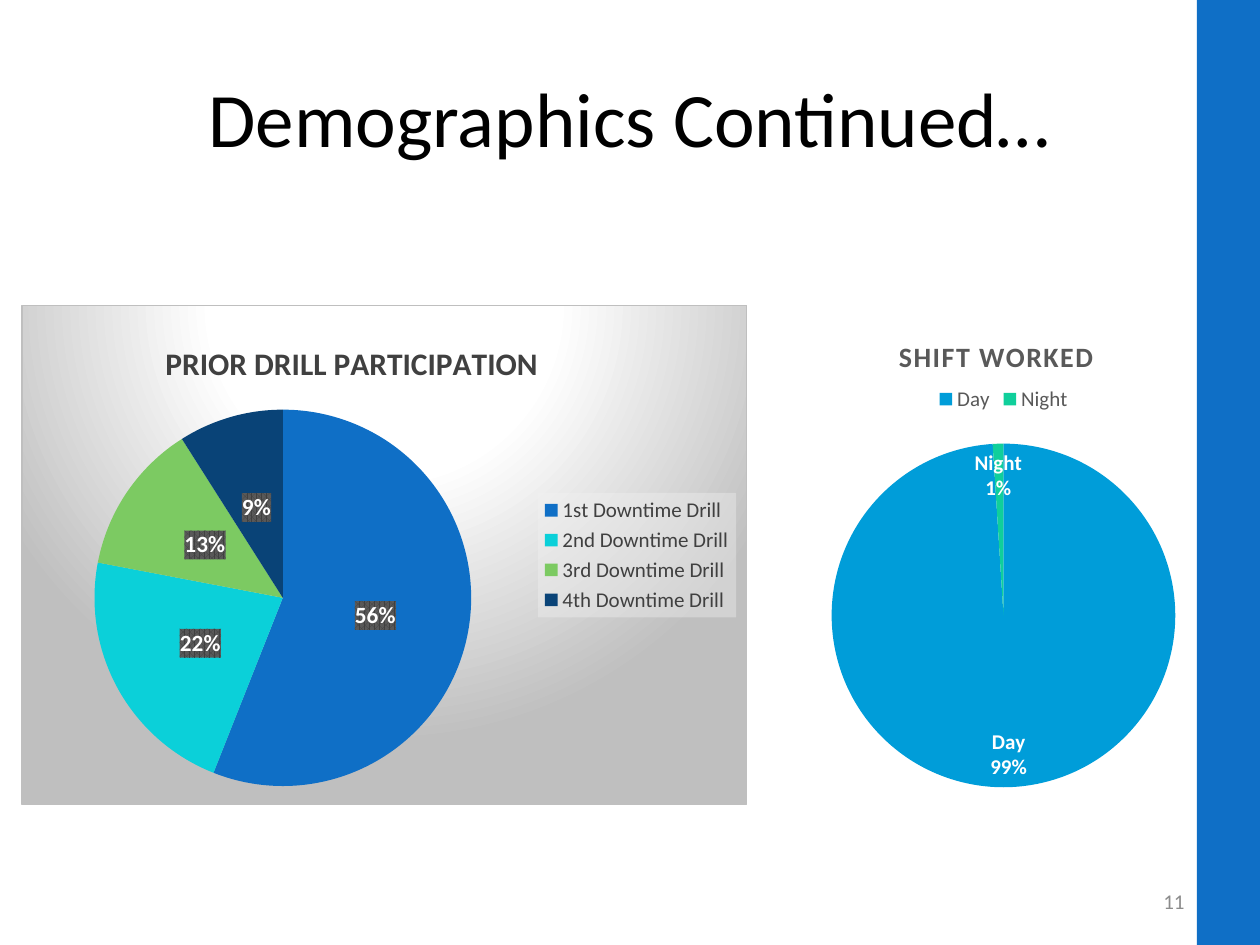
import pptx
import pptx.util
import pptx.chart.data
import pptx.dml.color
import pptx.enum.chart
import pptx.enum.shapes
import pptx.enum.text
import pptx.oxml
import pptx.oxml.ns

XL = pptx.enum.chart
ALIGN = pptx.enum.text.PP_ALIGN
W, H = 10, 7.5
FONT = "Calibri"
C = {"band": "0F6FC6", "black": "000000", "white": "FFFFFF", "number": "8C8C8C",
     "dark": "404040", "grey": "595959", "edge": "BFBFBF", "legend": "F2F2F2"}

# Content
TEXTS = [
    ("Demographics Continued…", (0.05, 0.04, 0.9, 1 / 6), ALIGN.CENTER,
     {"size": 44, "color": C["black"]}),
    ("11", (0.717, 0.927, 0.233, 0.053), ALIGN.RIGHT, {"size": 12, "color": C["number"]}),
]
CHART_TOP, CHART_HEIGHT = 2.42, 3.97
CHARTS = [
    {"title": "SHIFT WORKED", "left": 5, "width": 5.93,
     "slices": [("Day", 99, "009DD9"), ("Night", 1, "10CF9B")],
     "title_font": {"size": 16, "bold": True, "color": C["grey"]}, "spacing": 100,
     "title_at": (0.353, 0.055), "pie_at": (0.27, 0.276, 0.46, 0.69),
     "legend": XL.XL_LEGEND_POSITION.TOP, "legend_color": C["grey"],
     "label_size": 12, "label_at": XL.XL_LABEL_POSITION.INSIDE_END,
     "names": True, "panel": False},
    {"title": "PRIOR DRILL PARTICIPATION", "left": 0.17, "width": 5.76,
     "slices": [("1st Downtime Drill", 56, "0F6FC6"), ("2nd Downtime Drill", 22, "0BD0D9"),
                ("3rd Downtime Drill ", 13, "7CCA62"), ("4th Downtime Drill ", 9, "094377")],
     "title_font": {"size": 18, "bold": True, "color": C["dark"]}, "spacing": 0,
     "title_at": (0.19, 0.06), "pie_at": (0.1, 0.208, 0.52, 0.756),
     "legend": XL.XL_LEGEND_POSITION.RIGHT, "legend_color": C["dark"],
     "label_size": 13.3, "label_at": XL.XL_LABEL_POSITION.CENTER,
     "names": False, "panel": True},
]


def rgb(value):
    return pptx.dml.color.RGBColor.from_string(value)


def set_font(font, values):
    for key, value in {"name": FONT, **values}.items():
        if key == "color":
            font.color.rgb = rgb(value)
        else:
            setattr(font, key, pptx.util.Pt(value) if key == "size" else value)


def xml(tag, body):
    return pptx.oxml.parse_xml(f"<{tag} {pptx.oxml.ns.nsdecls('c', 'a')}>{body}</{tag}>")


def color_xml(value, extra=""):
    return f'<a:srgbClr val="{value}">{extra}</a:srgbClr>'


def layout(values, target=""):
    modes = "".join(f'<c:{k}Mode val="edge"/>' for k in "xy")
    sizes = "".join(f'<c:{k} val="{v}"/>' for k, v in zip("xywh", values))
    return xml("c:layout", f"<c:manualLayout>{target}{modes}{sizes}</c:manualLayout>")


def replace_layout(parent, new, after=None):
    for old in parent.findall(pptx.oxml.ns.qn("c:layout")):
        parent.remove(old)
    if after is None:
        parent.insert(0, new)
    else:
        after.addnext(new)


def add_panel(chart, labels):
    """Gradient backdrop, translucent legend and patterned label boxes."""
    stops = "".join(f'<a:gs pos="{pos * 1000}">{color_xml(value)}</a:gs>'
                    for pos, value in ((0, C["white"]), (39, C["white"]), (100, C["edge"])))
    back = (f'<a:gradFill><a:gsLst>{stops}</a:gsLst><a:path path="circle">'
            '<a:fillToRect l="50000" t="-80000" r="50000" b="180000"/></a:path></a:gradFill>'
            f'<a:ln w="9525"><a:solidFill>{color_xml(C["edge"])}</a:solidFill></a:ln>')
    veil = color_xml(C["legend"], '<a:alpha val="39000"/>')
    box = (f'<a:pattFill prst="pct75"><a:fgClr>{color_xml(C["dark"])}</a:fgClr>'
           f'<a:bgClr>{color_xml(C["grey"])}</a:bgClr></a:pattFill>')
    for owner, body in ((chart, back), (chart.legend, f"<a:solidFill>{veil}</a:solidFill>"),
                        (labels, box)):
        owner.font._element.getparent  # text properties exist before the fill
        text = owner._element if hasattr(owner, "_element") else owner
        text.find(pptx.oxml.ns.qn("c:txPr")).addprevious(xml("c:spPr", body))


def add_pie(s, d):
    data = pptx.chart.data.CategoryChartData()
    data.categories = [name for name, _, _ in d["slices"]]
    data.add_series("Series 1", [value for _, value, _ in d["slices"]])
    box = [pptx.util.Inches(v) for v in (d["left"], CHART_TOP, d["width"], CHART_HEIGHT)]
    chart = s.shapes.add_chart(XL.XL_CHART_TYPE.PIE, *box, data).chart
    set_font(chart.font, {"size": 10, "color": C["black"]})

    # Title
    tf = chart.chart_title.text_frame
    tf.text = d["title"]
    font = tf.paragraphs[0].runs[0].font
    set_font(font, d["title_font"])
    font._element.set("spc", str(d["spacing"]))
    title = chart.chart_title._element
    replace_layout(title, layout(d["title_at"]), title.find(pptx.oxml.ns.qn("c:tx")))

    # Legend
    chart.has_legend = True
    chart.legend.position = d["legend"]
    chart.legend.include_in_layout = False
    set_font(chart.legend.font, {"size": 12, "color": d["legend_color"]})

    # Slices and labels
    plot = chart.plots[0]
    plot.vary_by_categories = True
    for i, (_, _, value) in enumerate(d["slices"]):
        fill = plot.series[0].points[i].format.fill
        fill.solid()
        fill.fore_color.rgb = rgb(value)
    labels = plot.series[0].data_labels
    formats = {"show_percentage": True, "show_value": False, "show_legend_key": False,
               "show_category_name": d["names"], "position": d["label_at"],
               "number_format": "0%", "number_format_is_linked": False}
    for key, value in formats.items():
        setattr(labels, key, value)
    set_font(labels.font, {"size": d["label_size"], "bold": True, "color": C["white"]})
    area = plot._element.getparent()
    replace_layout(area, layout(d["pie_at"], '<c:layoutTarget val="inner"/>'))
    if d["panel"]:
        add_panel(chart, labels)


def main():
    prs = pptx.Presentation()
    prs.slide_width, prs.slide_height = pptx.util.Inches(W), pptx.util.Inches(H)
    s = prs.slides.add_slide(prs.slide_layouts[6])

    # Side band
    sp = s.shapes.add_shape(pptx.enum.shapes.MSO_SHAPE.RECTANGLE, int(prs.slide_width * 0.95), 0,
                            int(prs.slide_width * 0.05), prs.slide_height)
    sp.shadow.inherit = False
    sp.fill.solid()
    sp.fill.fore_color.rgb = rgb(C["band"])
    sp.line.fill.background()

    # Title and slide number
    for text, shares, align, font in TEXTS:
        box = [pptx.util.Inches(v * size) for v, size in zip(shares, (W, H, W, H))]
        tf = s.shapes.add_textbox(*box).text_frame
        tf.word_wrap = True
        tf.vertical_anchor = pptx.enum.text.MSO_ANCHOR.MIDDLE
        p = tf.paragraphs[0]
        p.alignment = align
        r = p.add_run()
        r.text = text
        set_font(r.font, font)

    for d in CHARTS:
        add_pie(s, d)
    prs.save("out.pptx")


if __name__ == "__main__":
    main()
